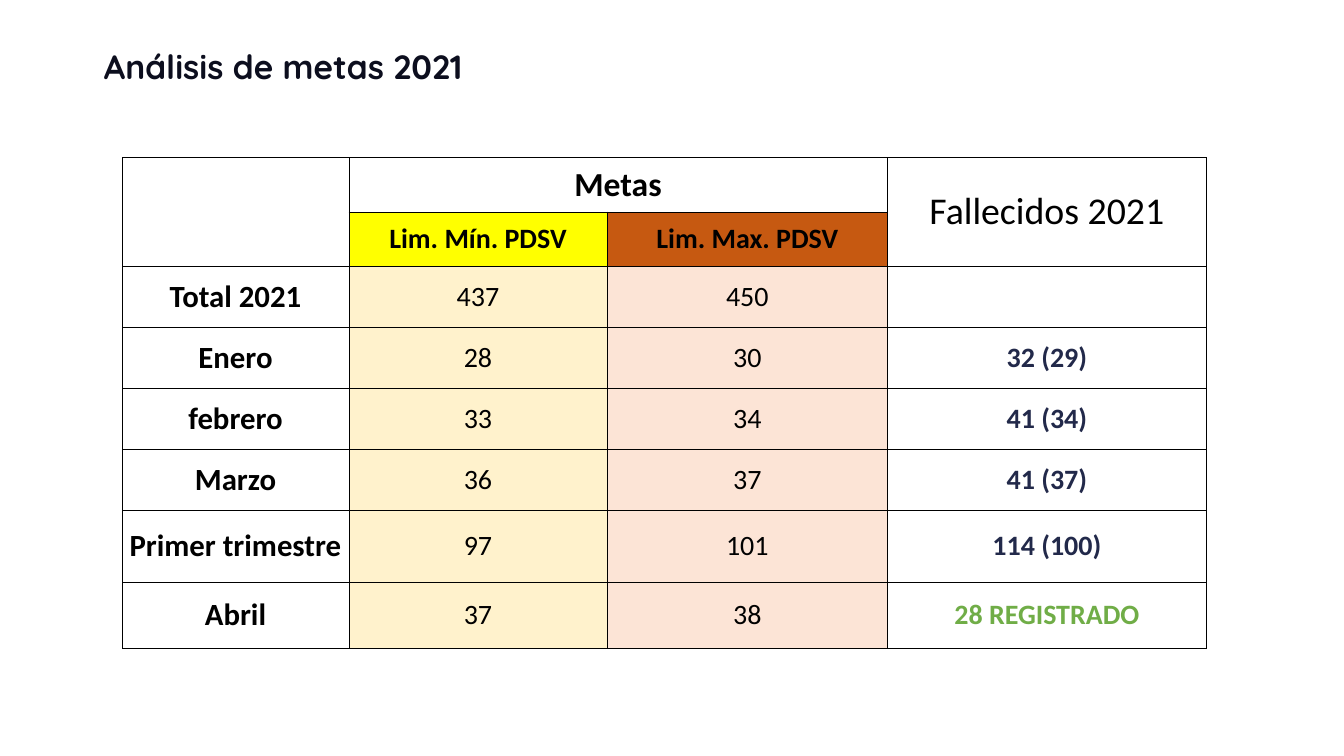
from lxml.etree import SubElement as Sub
from pptx import Presentation
from pptx.dml.color import RGBColor as Rgb
from pptx.enum.text import MSO_ANCHOR as Anchor, PP_ALIGN as Align
from pptx.oxml.ns import qn
from pptx.util import Inches, Pt

HUES = {
    "title": "0C0E1E", "ink": "000000", "navy": "22294A", "green": "70AD47",
    "white": "FFFFFF", "yellow": "FFFF00", "rust": "C65911",
    "cream": "FFF2CC", "peach": "FCE4D6",
}


def write(frame, text, size=40, bold=False, hue="ink", face="Calibri", align=Align.CENTER):
    para = frame.paragraphs[0]
    para.alignment = align
    run = para.add_run()
    run.text = text
    run.font.name = face
    run.font.size = Pt(size)
    run.font.bold = bold
    run.font.color.rgb = Rgb.from_string(HUES[hue])


def style(cell, fill):
    cell.vertical_anchor = Anchor.MIDDLE
    cell.margin_left = cell.margin_right = cell.margin_top = Inches(0.01)
    cell.margin_bottom = 0
    props = cell._tc.get_or_add_tcPr()
    for side in ("a:lnL", "a:lnR", "a:lnT", "a:lnB"):
        line = Sub(props, qn(side), w=str(Pt(0.5)))
        Sub(Sub(line, qn("a:solidFill")), qn("a:srgbClr"), val=HUES["ink"])
    cell.fill.solid()
    cell.fill.fore_color.rgb = Rgb.from_string(HUES[fill])


deck = Presentation()
deck.slide_width, deck.slide_height = Inches(26.67), Inches(15)
slide = deck.slides.add_slide(deck.slide_layouts[5])

title = slide.shapes.title
title.left, title.top = Inches(1.96), Inches(0.87)
title.width, title.height = Inches(24.7), Inches(0.91)
title.text_frame.vertical_anchor = Anchor.TOP
write(title.text_frame, "Análisis de metas 2021", size=48, bold=True,
      hue="title", face="Quicksand", align=Align.LEFT)

months = [
    ("Total 2021", "437", "450", ""),
    ("Enero", "28", "30", "32 (29)"),
    ("febrero", "33", "34", "41 (34)"),
    ("Marzo", "36", "37", "41 (37)"),
    ("Primer trimestre", "97", "101", "114 (100)"),
    ("Abril", "37", "38", "28 REGISTRADO"),
]
widths = [4.49, 5.13, 5.56, 6.33]
heights = [1.08] * 2 + [1.21] * 4 + [1.43, 1.31]

grid = slide.shapes.add_table(len(heights), len(widths), Inches(2.43), Inches(3.12),
                              Inches(sum(widths)), Inches(sum(heights))).table
grid.first_row = grid.horz_banding = False
for col, width in zip(grid.columns, widths):
    col.width = Inches(width)
for row, height in zip(grid.rows, heights):
    row.height = Inches(height)

fills = [["white"] * 4, ["white", "yellow", "rust", "white"]]
fills += [["white", "cream", "peach", "white"]] * len(months)
for r, hues in enumerate(fills):
    for c, hue in enumerate(hues):
        style(grid.cell(r, c), hue)

grid.cell(0, 0).merge(grid.cell(1, 0))
grid.cell(0, 1).merge(grid.cell(0, 2))
grid.cell(0, 3).merge(grid.cell(1, 3))
write(grid.cell(0, 1).text_frame, "Metas", size=48, bold=True)
write(grid.cell(0, 3).text_frame, "Fallecidos 2021", size=54)
write(grid.cell(1, 1).text_frame, "Lim. Mín. PDSV", bold=True)
write(grid.cell(1, 2).text_frame, "Lim. Max. PDSV", bold=True)

for r, (name, low, high, deaths) in enumerate(months, 2):
    write(grid.cell(r, 0).text_frame, name, size=44, bold=True)
    write(grid.cell(r, 1).text_frame, low)
    write(grid.cell(r, 2).text_frame, high)
    if deaths:
        hue = "green" if name == "Abril" else "navy"
        write(grid.cell(r, 3).text_frame, deaths, bold=True, hue=hue)

deck.save("out.pptx")
